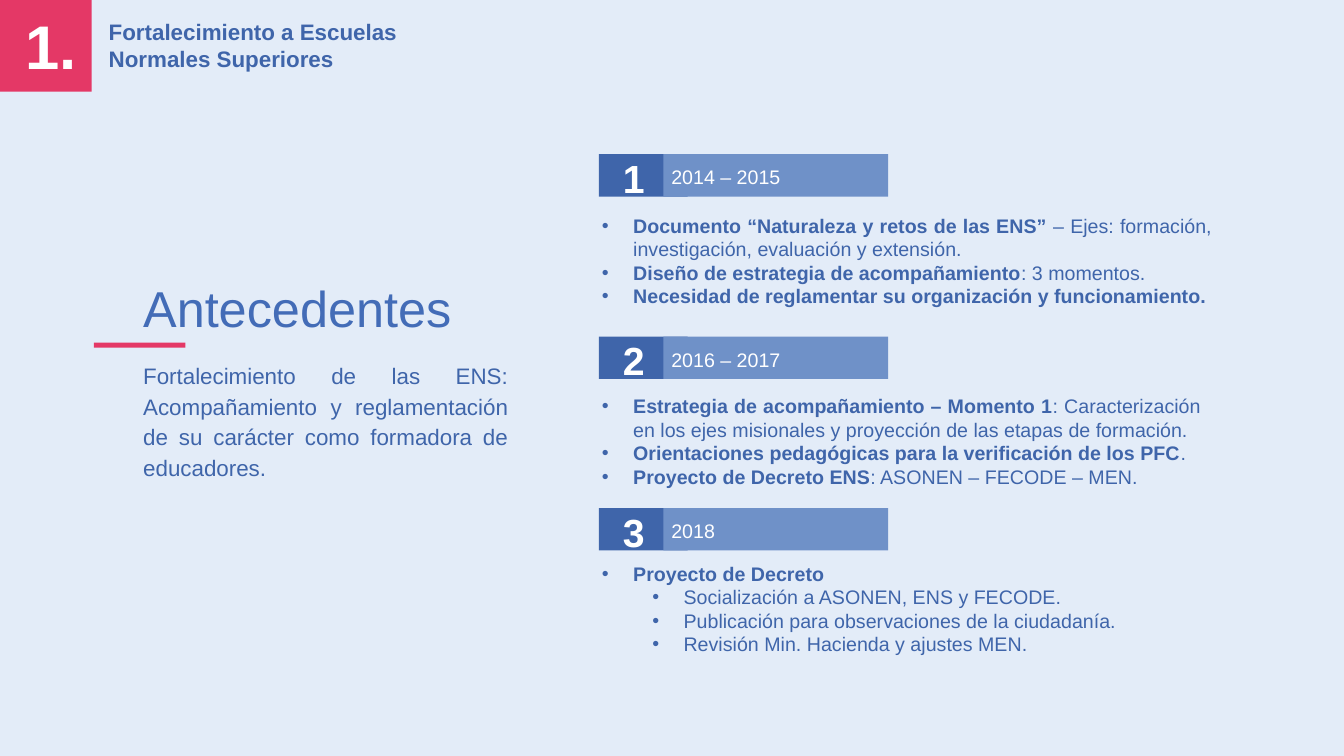
"""Build the background slide on strengthening the Escuelas Normales Superiores."""
from lxml import etree
from pptx import Presentation
from pptx.dml.color import RGBColor
from pptx.enum.shapes import MSO_SHAPE
from pptx.enum.text import MSO_ANCHOR, MSO_AUTO_SIZE, PP_ALIGN
from pptx.oxml.ns import qn
from pptx.util import Inches, Pt

RECTANGLE = MSO_SHAPE.RECTANGLE
TOP = MSO_ANCHOR.TOP
NO_FIT = MSO_AUTO_SIZE.NONE
LEFT, JUSTIFY = PP_ALIGN.LEFT, PP_ALIGN.JUSTIFY
COLORS = {
    "background": "E3ECF8",
    "accent": "E43866",
    "dark": "3F65AA",
    "light": "6F91C8",
    "title": "436CB7",
    "white": "FFFFFF",
}


def add_block(page, left, top, width, height, color):
    block = page.shapes.add_shape(
        RECTANGLE, Inches(left), Inches(top), Inches(width), Inches(height))
    block.shadow.inherit = False
    block.fill.solid()
    block.fill.fore_color.rgb = RGBColor.from_string(COLORS[color])
    block.line.fill.background()


def write(page, paragraphs, at, box=None, size=14, color="dark", align=LEFT,
          spacing=1.0, bullets=False, wrap=True):
    left, top, width, height = map(Inches, at)
    if box is None:
        box = page.shapes.add_textbox(left, top, width, height)
    box.left, box.top, box.width, box.height = left, top, width, height
    frame = box.text_frame
    frame.word_wrap = wrap
    frame.auto_size = NO_FIT
    frame.vertical_anchor = TOP
    for index, (level, spans) in enumerate(paragraphs):
        para = frame.paragraphs[0] if index == 0 else frame.add_paragraph()
        para.level = level
        para.alignment = align
        para.line_spacing = spacing
        para.space_before = Pt(0)
        if bullets:
            properties = para._p.get_or_add_pPr()
            properties.set("marL", str(Inches(0.31 + 0.5 * level)))
            properties.set("indent", str(Inches(-0.31)))
            etree.SubElement(properties, qn("a:buFont")).set("typeface", "Arial")
            etree.SubElement(properties, qn("a:buChar")).set("char", "•")
        for text, bold in spans:
            span = para.add_run()
            span.text = text
            span.font.name = "Arial"
            span.font.size = Pt(size)
            span.font.bold = bold
            span.font.color.rgb = RGBColor.from_string(COLORS[color])


deck = Presentation()
deck.slide_width, deck.slide_height = Inches(13.33), Inches(7.5)
page = deck.slides.add_slide(deck.slide_layouts.get_by_name("Comparison"))
page.background.fill.solid()
page.background.fill.fore_color.rgb = RGBColor.from_string(COLORS["background"])
title, description, *lists = page.placeholders

add_block(page, 0, 0, 0.91, 0.91, "accent")
write(page, [(0, [("1.", True)])], (0.15, 0.03, 0.76, 0.84), size=44, color="white")
write(page, [(0, [("Fortalecimiento a Escuelas Normales Superiores", True)])],
      (0.98, 0.13, 3.52, 0.64), size=16)

write(page, [(0, [("Antecedentes", False)])], (1.32, 2.7, 4.26, 0.71),
      box=title, size=36, color="title")
add_block(page, 0.93, 3.4, 0.91, 0.05, "accent")
write(page, [(0, [("Fortalecimiento de las ENS: Acompañamiento y reglamentación "
                   "de su carácter como formadora de educadores.", False)])],
      (1.32, 3.5, 3.82, 1.54), box=description, size=16, align=JUSTIFY, spacing=1.15)

periods = [
    ("2014 – 2015", 1.53, (5.87, 2.07, 6.25, 1.28), [
        (0, [("Documento “Naturaleza y retos de las ENS”", True),
             (" – Ejes: formación, investigación, evaluación y extensión.", False)]),
        (0, [("Diseño de estrategia de acompañamiento", True), (": 3 momentos.", False)]),
        (0, [("Necesidad de reglamentar su organización y funcionamiento.", True)]),
    ]),
    ("2016 – 2017", 3.34, (5.87, 3.86, 6.14, 1.28), [
        (0, [("Estrategia de acompañamiento – Momento 1", True),
             (": Caracterización en los ejes misionales y proyección de las "
              "etapas de formación.", False)]),
        (0, [("Orientaciones pedagógicas para la verificación de los PFC", True),
             (".", False)]),
        (0, [("Proyecto de Decreto ENS", True), (": ASONEN – FECODE – MEN.", False)]),
    ]),
    ("2018", 5.04, (5.87, 5.52, 6.44, 1.04), [
        (0, [("Proyecto de Decreto", True)]),
        (1, [("Socialización a ASONEN, ENS y FECODE.", False)]),
        (1, [("Publicación para observaciones de la ciudadanía.", False)]),
        (1, [("Revisión Min. Hacienda y ajustes MEN.", False)]),
    ]),
]
for number, (years, top, list_at, items) in enumerate(periods, start=1):
    add_block(page, 5.94, top, 0.88, 0.42, "dark")
    add_block(page, 6.58, top, 2.23, 0.42, "light")
    write(page, [(0, [(str(number), True)])], (6.08, top - 0.05, 0.37, 0.57),
          size=28, color="white")
    write(page, [(0, [(years, False)])], (6.56, top + 0.06, 1.34, 0.34),
          color="white", wrap=False)
    write(page, items, list_at, box=lists[number - 1], align=JUSTIFY, bullets=True)

deck.save("out.pptx")
